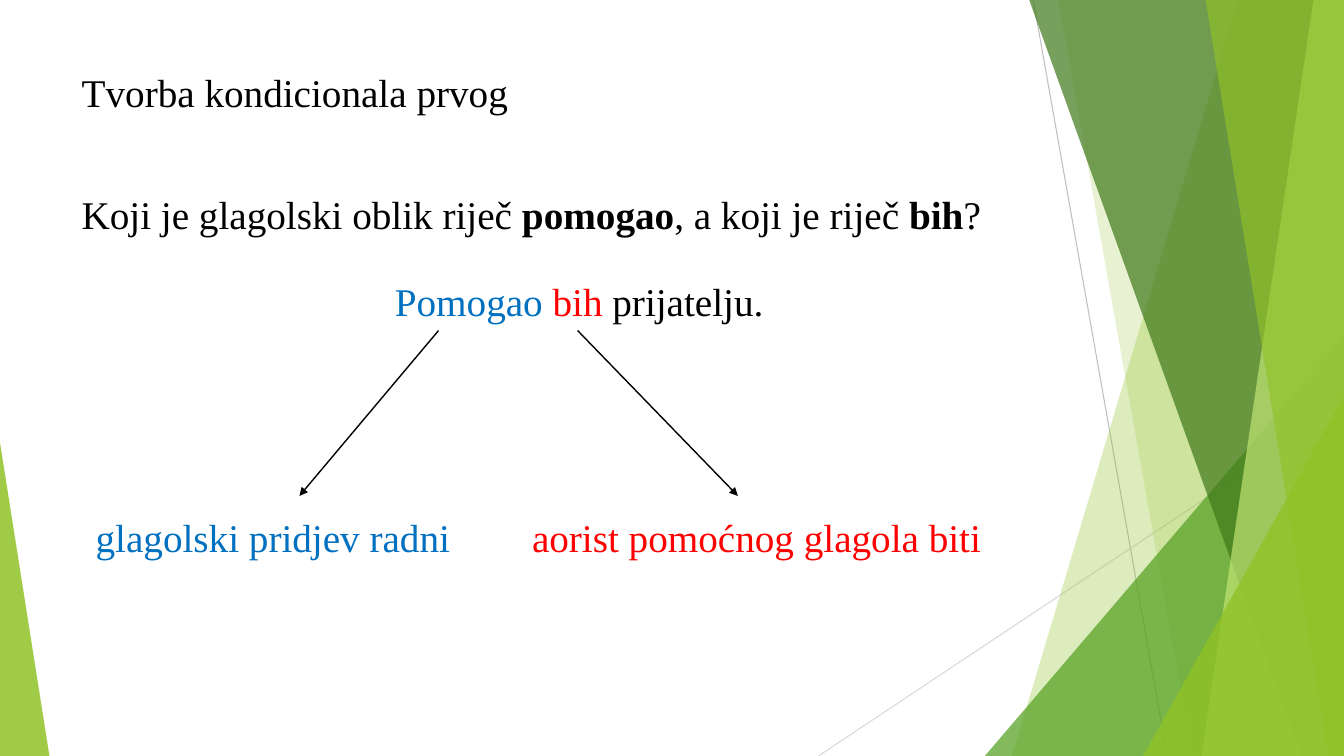
from lxml import etree
from pptx import Presentation
from pptx.dml.color import RGBColor
from pptx.enum.shapes import MSO_CONNECTOR, MSO_SHAPE
from pptx.enum.text import MSO_ANCHOR, MSO_AUTO_SIZE, PP_ALIGN
from pptx.oxml.ns import qn
from pptx.util import Inches, Pt

STRAIGHT = MSO_CONNECTOR.STRAIGHT
TRIANGLE = MSO_SHAPE.ISOSCELES_TRIANGLE
TOP = MSO_ANCHOR.TOP
NO_AUTOFIT = MSO_AUTO_SIZE.NONE
LEFT, CENTER = PP_ALIGN.LEFT, PP_ALIGN.CENTER
TITLE_ONLY = 5

BLACK, BLUE, RED = "000000", "0070C0", "FF0000"
LIME, GREEN, DARK_GREEN, PALE_LIME = "90C226", "54A021", "3F7819", "C0E474"


def color(hex_string):
    return RGBColor.from_string(hex_string)


class SlideBuilder:
    font_name = "Times New Roman"
    font_size = Pt(28)

    def __init__(self, presentation):
        self.width = presentation.slide_width
        self.height = presentation.slide_height
        self.slide = presentation.slides.add_slide(presentation.slide_layouts[TITLE_ONLY])

    def x(self, percent):
        return round(self.width * percent / 100)

    def y(self, percent):
        return round(self.height * percent / 100)

    def box(self, left, top, width, height):
        return self.x(left), self.y(top), self.x(width), self.y(height)

    def paint(self, shape, fill, opacity):
        shape.shadow.inherit = False
        shape.fill.solid()
        shape.fill.fore_color.rgb = color(fill)
        shape.line.fill.background()
        rgb = shape._element.spPr.find(qn("a:solidFill")).find(qn("a:srgbClr"))
        etree.SubElement(rgb, qn("a:alpha")).set("val", str(opacity * 1000))

    def band(self, top_left, bottom_left, fill, opacity):
        builder = self.slide.shapes.build_freeform(self.x(top_left), 0)
        corners = [(100, 0), (100, 100), (bottom_left, 100)]
        builder.add_line_segments([(self.x(x), self.y(y)) for x, y in corners])
        self.paint(builder.convert_to_shape(), fill, opacity)

    def corner_triangle(self, left, top, width, apex, fill, opacity):
        shape = self.slide.shapes.add_shape(TRIANGLE, *self.box(left, top, width, 100 - top))
        shape.adjustments[0] = apex
        self.paint(shape, fill, opacity)

    def line(self, start, end, line_color, points, arrow=False):
        connector = self.slide.shapes.add_connector(
            STRAIGHT, self.x(start[0]), self.y(start[1]), self.x(end[0]), self.y(end[1]))
        connector.line.color.rgb = color(line_color)
        connector.line.width = Pt(points)
        properties = connector._element.spPr
        if arrow:
            outline = properties.find(qn("a:ln"))
            etree.SubElement(outline, qn("a:tailEnd")).set("type", "triangle")
        etree.SubElement(properties, qn("a:effectLst"))

    def fill_paragraph(self, paragraph, pieces, alignment=LEFT):
        paragraph.alignment = alignment
        for text, text_color, bold in pieces:
            run = paragraph.add_run()
            run.text = text
            run.font.name = self.font_name
            run.font.size = self.font_size
            run.font.bold = bold
            run.font.color.rgb = color(text_color)

    def title(self, text, left, top, width, height):
        title = self.slide.shapes.title
        title.left, title.top, title.width, title.height = self.box(left, top, width, height)
        title.text_frame.vertical_anchor = TOP
        title.text_frame.auto_size = NO_AUTOFIT
        title.text_frame.word_wrap = True
        self.fill_paragraph(title.text_frame.paragraphs[0], [(text, BLACK, False)])

    def text(self, left, top, width, height, pieces):
        frame = self.slide.shapes.add_textbox(*self.box(left, top, width, height)).text_frame
        frame.word_wrap = True
        self.fill_paragraph(frame.paragraphs[0], pieces)
        return frame


def add_decoration(builder):
    builder.line((76.88, 0), (86.85, 100), "BFBFBF", 0.75)
    builder.line((100, 53.73), (60.9, 100), "D9D9D9", 0.75)
    builder.band(92.1, 75.3, LIME, 30)
    builder.band(78.75, 88.73, LIME, 20)
    builder.corner_triangle(73.28, 44.4, 26.72, 1, GREEN, 72)
    builder.band(76.58, 96.83, DARK_GREEN, 70)
    builder.band(97.73, 89.4, PALE_LIME, 70)
    builder.band(89.7, 98.85, LIME, 65)
    builder.corner_triangle(85.05, 52.4, 14.95, 1, LIME, 80)
    builder.corner_triangle(0, 58.53, 3.68, 0, LIME, 85)


def add_content(builder):
    builder.title("Tvorba kondicionala prvog", 5.33, 8.4, 37.73, 7.6)
    question = builder.text(5.33, 25.2, 75.53, 18.53, [
        ("Koji je glagolski oblik riječ ", BLACK, False),
        ("pomogao", BLACK, True),
        (", a koji je riječ ", BLACK, False),
        ("bih", BLACK, True),
        ("?", BLACK, False),
    ])
    example = question.add_paragraph()
    example.space_before = Pt(32)
    builder.fill_paragraph(example, [
        ("Pomogao ", BLUE, False),
        ("bih ", RED, False),
        ("prijatelju.", BLACK, False),
    ], CENTER)
    for paragraph in question.paragraphs:
        paragraph.line_spacing = 0.9
    answers = [
        ("glagolski pridjev radni", BLUE, 6.38, 31.88, 32.63, 22.28),
        ("aorist pomoćnog glagola biti", RED, 38.85, 38.85, 42.98, 54.9),
    ]
    for answer, answer_color, left, width, arrow_start, arrow_end in answers:
        builder.line((arrow_start, 43.73), (arrow_end, 65.6), BLACK, 1, arrow=True)
        builder.text(left, 67.2, width, 7.6, [(answer, answer_color, False)])


def main():
    presentation = Presentation()
    presentation.slide_width = Inches(13.33)
    presentation.slide_height = Inches(7.5)
    builder = SlideBuilder(presentation)
    add_decoration(builder)
    add_content(builder)
    presentation.save("out.pptx")


if __name__ == "__main__":
    main()
